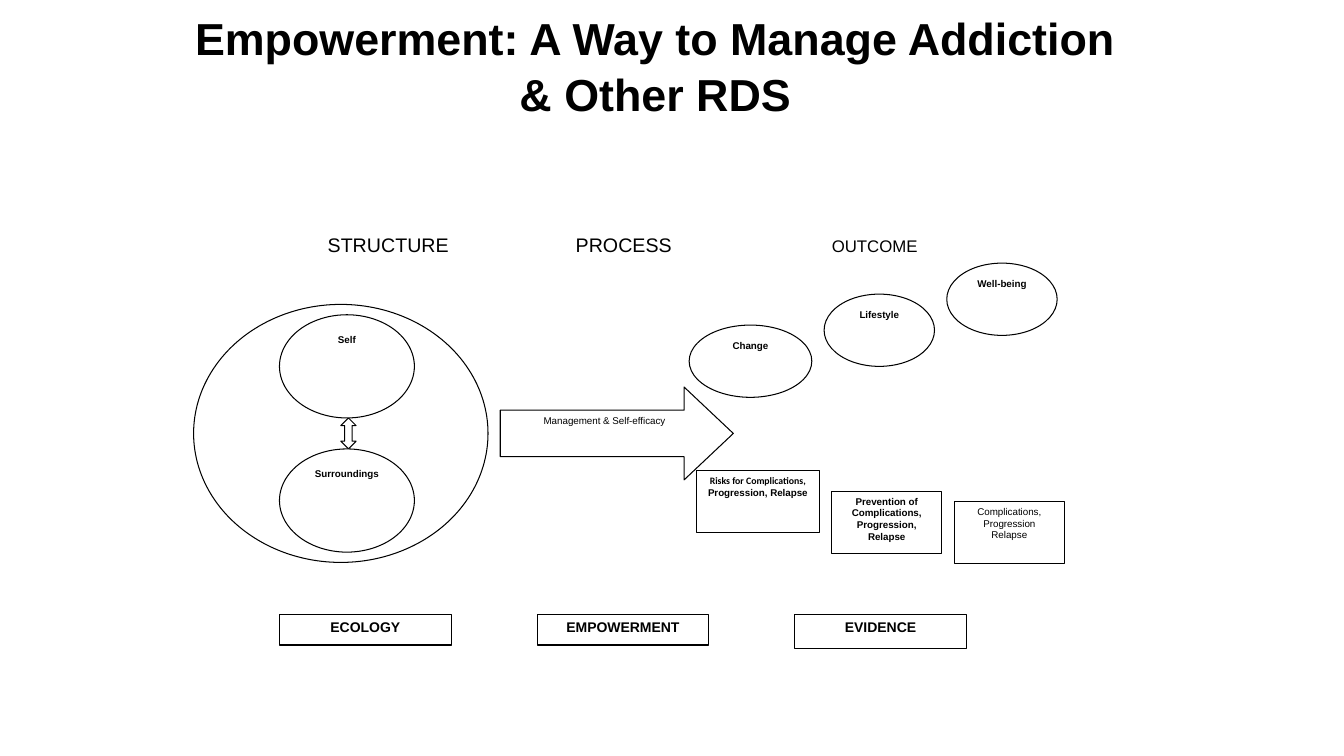
from dataclasses import dataclass

import pptx
import pptx.dml.color
import pptx.enum.shapes
import pptx.enum.text
import pptx.util
from lxml import etree

Inches, Pt = pptx.util.Inches, pptx.util.Pt
Kind = pptx.enum.shapes.MSO_SHAPE
Align = pptx.enum.text.PP_ALIGN
Anchor = pptx.enum.text.MSO_ANCHOR


@dataclass(frozen=True)
class Theme:
    ink: pptx.dml.color.RGBColor = pptx.dml.color.RGBColor(0, 0, 0)
    paper: pptx.dml.color.RGBColor = pptx.dml.color.RGBColor(255, 255, 255)
    font: str = "Arial"
    title: float = 32
    head: float = 14
    minor: float = 12
    stage: float = 10
    label: float = 7
    line: float = 0.75


@dataclass(frozen=True)
class Node:
    kind: pptx.enum.shapes.MSO_SHAPE
    col: float
    row: float
    cols: float
    rows: float
    text: str = ""
    size: float = Theme.label
    bold: bool = True
    first: str = Theme.font  # font of the first paragraph
    adjust: tuple[float, ...] = ()


THEME = Theme()

# Grid: the large ellipse spans 24 columns and 25 rows from the origin
LEFT, TOP = 1.92, 3.02
COL, ROW = 2.92 / 24, 2.56 / 25

OVAL, BOX, STEP = Kind.OVAL, Kind.RECTANGLE, Kind.FLOWCHART_PROCESS

NODES = [
    # Risks
    Node(BOX, 41, 16.1, 10, 6,
         "Risks for Complications,\nProgression, Relapse", first="Calibri"),
    Node(BOX, 52, 18.1, 9, 6,
         "Prevention of Complications,\nProgression,\nRelapse"),
    Node(BOX, 62, 19.1, 9, 6,
         "Complications,\nProgression\nRelapse", bold=False),
    # Rising outcomes
    Node(OVAL, 40.4, 2, 10, 7, "Change"),
    Node(OVAL, 51.4, -1, 9, 7, "Lifestyle"),
    Node(OVAL, 61.4, -4, 9, 7, "Well-being"),
    # Stages
    Node(STEP, 7, 30, 14, 3, "ECOLOGY", THEME.stage),
    Node(STEP, 49, 30, 14, 3.3, "EVIDENCE", THEME.stage),
    Node(STEP, 28, 30, 14, 3, "EMPOWERMENT", THEME.stage),
    # Structure and process
    Node(OVAL, 0, 0, 24, 25),
    Node(Kind.UP_DOWN_ARROW, 12, 11, 1.25, 3, adjust=(0.5, 0.48)),
    Node(OVAL, 7, 1, 11, 10, "Self"),
    Node(OVAL, 7, 14, 11, 10, "Surroundings"),
    Node(Kind.RIGHT_ARROW, 25, 8, 19, 9, "Management & Self-efficacy",
         bold=False, adjust=(0.5, 0.53)),
]


def style(font, size: float, bold: bool, name: str = THEME.font) -> None:
    font.name, font.size, font.bold = name, Pt(size), bold
    font.color.rgb = THEME.ink


def set_frame(frame, top: float = 0.04) -> None:
    frame.word_wrap = True
    frame.vertical_anchor = Anchor.TOP
    frame.margin_left = frame.margin_right = Inches(0.09)
    frame.margin_top, frame.margin_bottom = Inches(top), Inches(0.04)


def draw_title(slide) -> None:
    box = slide.shapes.add_textbox(Inches(1.67), 0, Inches(9.66), Inches(1.74))
    set_frame(box.text_frame, 0.08)
    box.text_frame.text = "Empowerment: A Way to Manage Addiction & Other RDS"
    line = box.text_frame.paragraphs[0]
    line.alignment, line.line_spacing = Align.CENTER, 1.05
    style(line.runs[0].font, THEME.title, True)


def draw_heads(slide) -> None:
    box = slide.shapes.add_textbox(Inches(2.16), Inches(2.08),
                                   Inches(9.01), Inches(4.43))
    set_frame(box.text_frame, 0.26)
    line = box.text_frame.paragraphs[0]
    space = "{http://schemas.openxmlformats.org/drawingml/2006/main}"
    tabs = etree.SubElement(line._p.get_or_add_pPr(), space + "tabLst")
    heads = [("STRUCTURE", 1, THEME.head), ("PROCESS", 3.46, THEME.head),
             ("OUTCOME", 6, THEME.minor)]
    for text, stop, size in heads:
        etree.SubElement(tabs, space + "tab", pos=str(Inches(stop)), algn="l")
        run = line.add_run()
        run.text = "\t" + text
        style(run.font, size, False)


def draw_node(slide, node: Node) -> None:
    shape = slide.shapes.add_shape(
        node.kind,
        Inches(LEFT + node.col * COL), Inches(TOP + node.row * ROW),
        Inches(node.cols * COL), Inches(node.rows * ROW))
    shape.shadow.inherit = False
    shape.fill.solid()
    shape.fill.fore_color.rgb = THEME.paper
    shape.line.color.rgb = THEME.ink
    shape.line.width = Pt(THEME.line)
    for spot, value in enumerate(node.adjust):
        shape.adjustments[spot] = value
    if not node.text:
        return
    set_frame(shape.text_frame)
    shape.text_frame.text = node.text
    for spot, line in enumerate(shape.text_frame.paragraphs):
        line.alignment = Align.CENTER
        name = THEME.font if spot else node.first
        style(line.runs[0].font, node.size, node.bold, name)


def main() -> None:
    deck = pptx.Presentation()
    deck.slide_width, deck.slide_height = Inches(13.33), Inches(7.5)
    slide = deck.slides.add_slide(deck.slide_layouts[6])
    draw_title(slide)
    draw_heads(slide)
    for node in NODES:
        draw_node(slide, node)
    deck.save("out.pptx")


if __name__ == "__main__":
    main()
